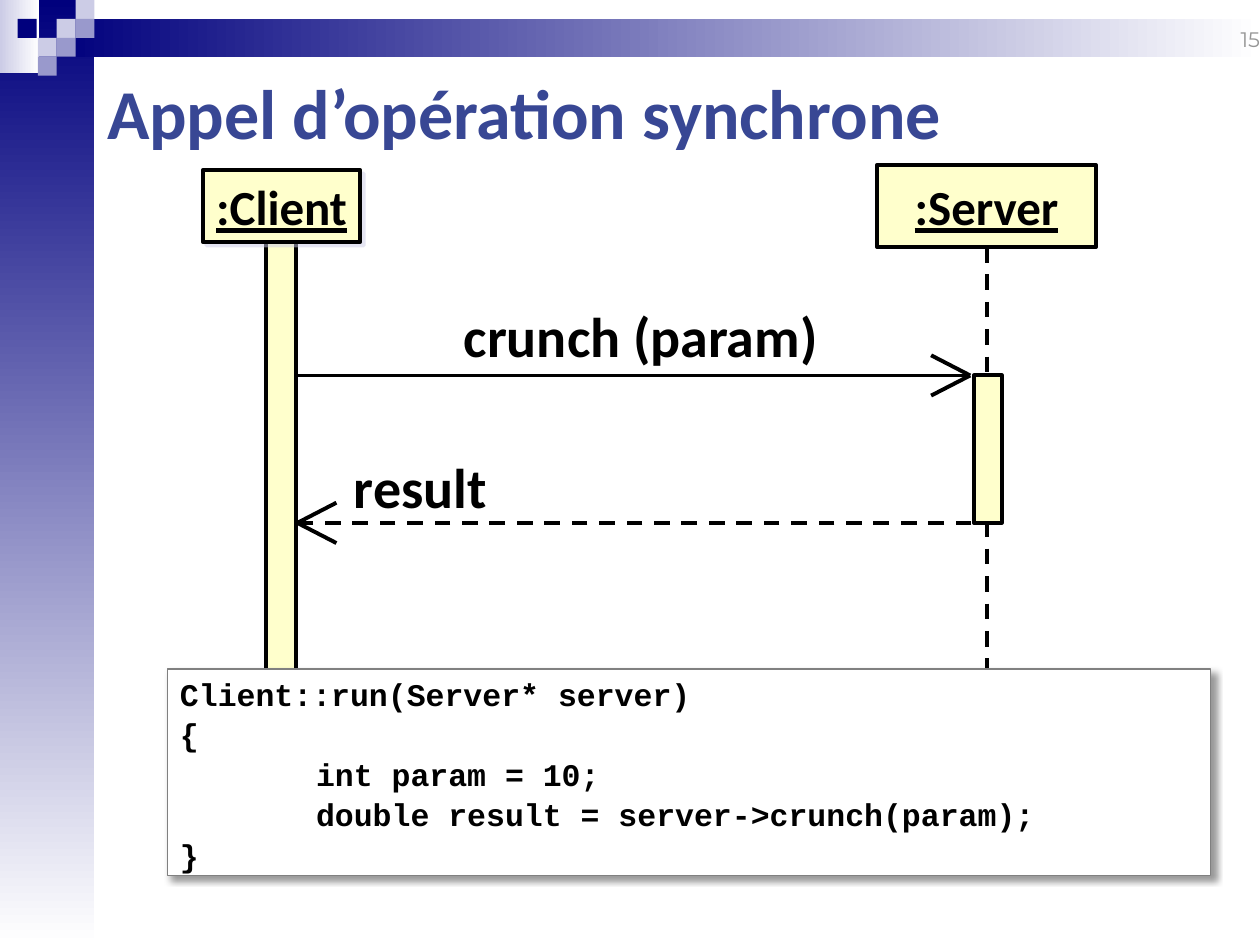
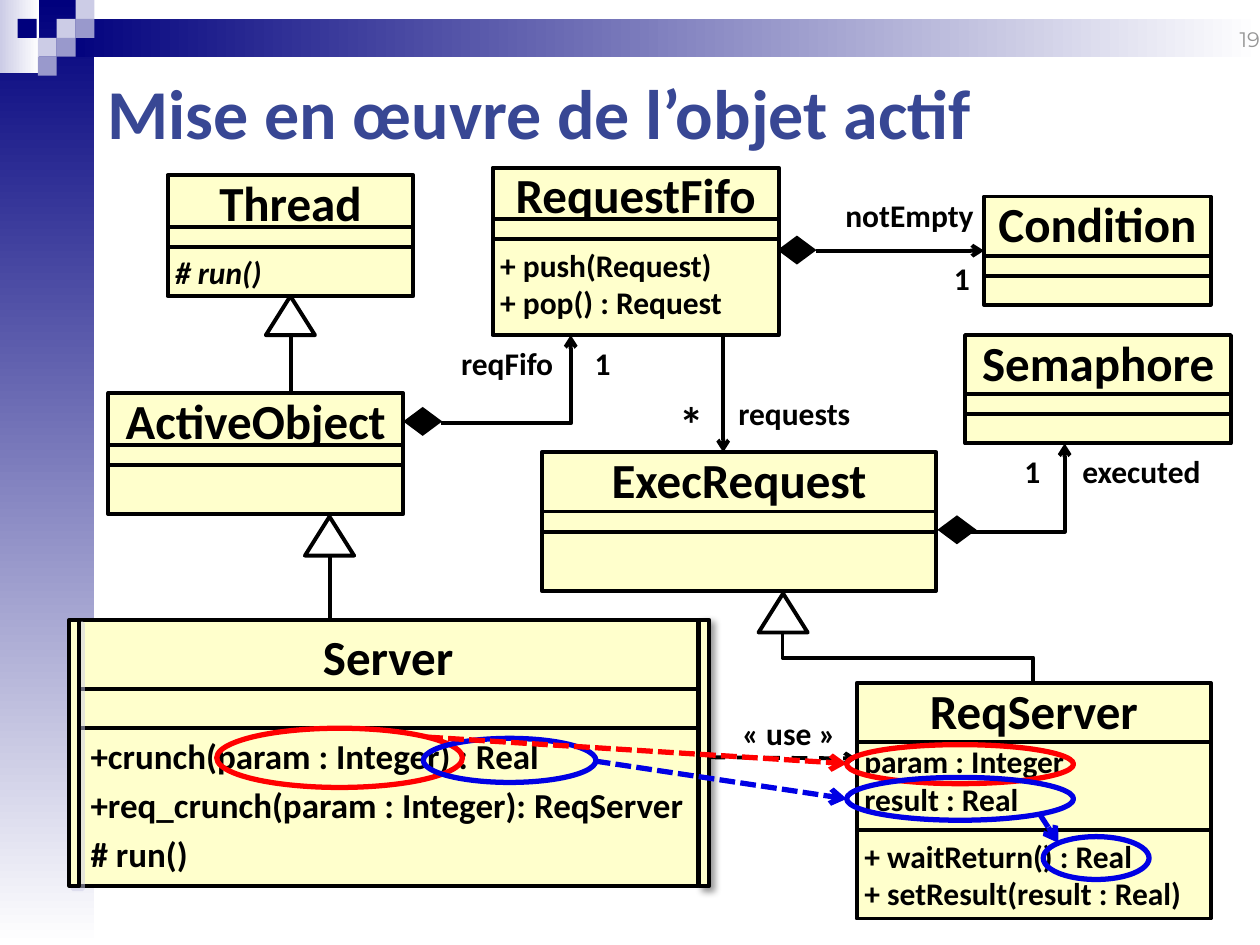
from dataclasses import dataclass
from lxml.etree import SubElement
from pptx import Presentation
from pptx.dml.color import RGBColor
from pptx.enum.dml import MSO_LINE
from pptx.enum.shapes import MSO_CONNECTOR, MSO_SHAPE
from pptx.enum.text import MSO_ANCHOR, MSO_AUTO_SIZE, PP_ALIGN
from pptx.oxml.ns import qn
from pptx.util import Inches, Pt


@dataclass(frozen=True)
class Theme:
    """Colours, fonts and sizes shared by the slides."""
    navy: str = "00007D"
    lilac: str = "CCCCE6"
    violet: str = "9999CC"
    white: str = "FFFFFF"
    black: str = "000000"
    grey: str = "808080"
    page_grey: str = "969696"
    title_blue: str = "384794"
    cream: str = "FFFFCC"
    red: str = "FF0000"
    blue: str = "0000E4"
    body_font: str = "Calibri"
    code_font: str = "Courier New"
    page_font: str = "Montserrat"
    title_size: int = 40
    message_size: int = 32
    name_size: int = 28
    method_size: int = 20
    label_size: int = 18
    page_size: int = 12
    outline: float = 2.25
    mark: float = 3


THEME = Theme()
SOFT_SHADOW = (THEME.lilac, 50, 0, 2.8)
DARK_SHADOW = (THEME.black, 40, 4, 3)


def rgb(colour):
    """Turn a hex string into a colour value."""
    return RGBColor.from_string(colour)


def apply(target, values):
    """Set each named attribute of the target."""
    for name, value in values.items():
        setattr(target, name, value)


def margins(left, top):
    """Return symmetric text margins given in inches."""
    return dict(margin_left=Inches(left), margin_right=Inches(left),
                margin_top=Inches(top), margin_bottom=Inches(top))


def write(frame, lines, size, colour=THEME.black, font=THEME.body_font, bold=True,
          italic=False, underline=False, gap=0, tab=None, paragraph_format=None, **frame_format):
    """Fill a text frame with one formatted paragraph per line."""
    apply(frame, dict(word_wrap=False, vertical_anchor=MSO_ANCHOR.TOP) | frame_format)
    for index, line in enumerate(lines):
        paragraph = frame.add_paragraph() if index else frame.paragraphs[0]
        paragraph.text = line
        apply(paragraph, dict(alignment=PP_ALIGN.LEFT) | (paragraph_format or {}))
        if index and gap:
            paragraph.space_before = Pt(gap)
        if tab:
            tabs = SubElement(paragraph._p.get_or_add_pPr(), qn("a:tabLst"))
            SubElement(tabs, qn("a:tab"), pos=str(Inches(tab)), algn="l")
        for run in paragraph.runs:
            apply(run.font, dict(name=font, size=Pt(size), bold=bold,
                                 italic=italic, underline=underline))
            run.font.color.rgb = rgb(colour)


def stroke(item, colour, width, dash=None, arrow=False):
    """Format an outline, with an optional dash and open arrowhead."""
    item.line.color.rgb = rgb(colour)
    apply(item.line, dict(width=Pt(width), dash_style=dash))
    if arrow:
        SubElement(item._element.spPr.find(qn("a:ln")), qn("a:tailEnd"), type="arrow")


def cast_shadow(shape, colour, opacity, blur, distance):
    """Add a shadow falling to the lower right."""
    effects = shape._element.spPr.find(qn("a:effectLst"))
    shadow = SubElement(effects, qn("a:outerShdw"), blurRad=str(Pt(blur)),
                        dist=str(Pt(distance)), dir="2700000", algn="tl", rotWithShape="0")
    tint = SubElement(shadow, qn("a:srgbClr"), val=colour)
    SubElement(tint, qn("a:alpha"), val=str(opacity * 1000))


def block(slide, place, fill=THEME.cream, line=THEME.black, width=THEME.outline,
          kind=MSO_SHAPE.RECTANGLE, shadow=None):
    """Add a preset shape; a fill or line of None is left out."""
    shape = slide.shapes.add_shape(kind, *map(Inches, place))
    shape.shadow.inherit = False
    if fill:
        shape.fill.solid()
        shape.fill.fore_color.rgb = rgb(fill)
    else:
        shape.fill.background()
    if line:
        stroke(shape, line, width)
    else:
        shape.line.fill.background()
    if shadow:
        cast_shadow(shape, *shadow)
    return shape


def gradient(slide, place, start, angle):
    """Add a band fading from a colour to white."""
    band = block(slide, place, line=None)
    band.fill.gradient()
    band.fill.gradient_angle = angle
    for stop, colour in zip(band.fill.gradient_stops, (start, THEME.white)):
        stop.color.rgb = rgb(colour)


def label(slide, place, text, size=THEME.label_size):
    """Add a diagram label without margins."""
    box = slide.shapes.add_textbox(*map(Inches, place))
    write(box.text_frame, [text], size, auto_size=MSO_AUTO_SIZE.SHAPE_TO_FIT_TEXT,
          **margins(0, 0))


def link(slide, start, end, colour=THEME.black, width=THEME.outline, dash=None,
         arrow=False, kind=MSO_CONNECTOR.STRAIGHT):
    """Add a connector between two points."""
    connector = slide.shapes.add_connector(kind, *map(Inches, (*start, *end)))
    stroke(connector, colour, width, dash, arrow)
    SubElement(connector._element.spPr, qn("a:effectLst"))
    return connector


def drop_link(slide, start, end):
    """Add an elbow that leaves downwards and arrives downwards."""
    middle_x, middle_y = (start[0] + end[0]) / 2, (start[1] + end[1]) / 2
    half_run, half_drop = (end[0] - start[0]) / 2, (end[1] - start[1]) / 2
    elbow = link(slide, (middle_x + half_drop, middle_y - half_run),
                 (middle_x - half_drop, middle_y + half_run), kind=MSO_CONNECTOR.ELBOW)
    elbow._element.spPr.find(qn("a:xfrm")).set("rot", "16200000")


def corner_arrow(slide, start, end):
    """Add an arrow that runs across and then up."""
    corner = (end[0], start[1])
    builder = slide.shapes.build_freeform(*map(Inches, start))
    builder.add_line_segments([tuple(map(Inches, point)) for point in (corner, end)], close=False)
    route = builder.convert_to_shape()
    route.shadow.inherit = False
    route.fill.background()
    stroke(route, THEME.black, THEME.outline, arrow=True)


def message(slide, start, end, dash=None):
    """Add a sequence message with a wide open head."""
    link(slide, start, end, dash=dash)
    back = end[0] + (0.31 if start[0] > end[0] else -0.31)
    for rise in (-0.16, 0.16):
        link(slide, (back, end[1] + rise), end)


def participant(slide, place, name, shadow=None):
    """Add the head box of a lifeline."""
    head = block(slide, place, shadow=shadow)
    write(head.text_frame, [name], THEME.name_size, underline=True,
          vertical_anchor=MSO_ANCHOR.MIDDLE, paragraph_format=dict(alignment=PP_ALIGN.CENTER))
    return head


def uml_class(slide, left, top, width, heights, name, attributes=(), operations=(),
              italic=False, size=THEME.label_size, inset=0.06, gap=0, spacing=0.85, shadow=None):
    """Add a class box with name, attribute and operation sections."""
    sections = []
    for height in heights:
        section = block(slide, (left, top, width, height), shadow=None if sections else shadow)
        sections.append(section.text_frame)
        top += height
    write(sections[0], [name], THEME.name_size, **margins(inset, 0.05),
          paragraph_format=dict(alignment=PP_ALIGN.CENTER, line_spacing=spacing))
    if attributes:
        write(sections[1], attributes, size, **margins(inset, 0))
    if operations:
        write(sections[2], operations, size, italic=italic, gap=gap, **margins(inset, 0.05))


def start_slide(deck, title, page, title_height):
    """Add a slide with its bands, corner squares, title and page number."""
    slide = deck.slides.add_slide(deck.slide_layouts[5])
    gradient(slide, (0, 0, 0.75, 7.5), THEME.navy, 270)
    gradient(slide, (0, 0, 0.31, 0.58), THEME.lilac, 0)
    gradient(slide, (0.45, 0.15, 9.55, 0.3), THEME.navy, 0)
    squares = {THEME.lilac: [(0.45, 0.15), (0.6, 0), (0.3, 0.3)],
               THEME.violet: [(0.6, 0.15), (0.45, 0.3), (0.3, 0.45)],
               THEME.navy: [(0.14, 0.15)]}
    for colour, corners in squares.items():
        for corner in corners:
            block(slide, (*corner, 0.15, 0.15), colour, None)
    heading = slide.shapes.title
    apply(heading, dict(left=Inches(0.75), top=Inches(0.5),
                        width=Inches(9.1), height=Inches(title_height)))
    write(heading.text_frame, [title], THEME.title_size, THEME.title_blue,
          word_wrap=True, auto_size=MSO_AUTO_SIZE.NONE)
    number = slide.shapes.add_textbox(*map(Inches, (9.68, 0.21, 0.32, 0.2)))
    write(number.text_frame, [page], THEME.page_size, THEME.page_grey, THEME.page_font,
          bold=False, vertical_anchor=MSO_ANCHOR.MIDDLE, **margins(0, 0),
          paragraph_format=dict(alignment=PP_ALIGN.RIGHT))
    return slide


def build_synchronous_call(deck):
    """Build the sequence diagram of a synchronous call."""
    slide = start_slide(deck, "Appel d’opération synchrone", "15", 1.12)
    server = participant(slide, (6.96, 1.31, 1.74, 0.65), ":Server")
    block(slide, (2.11, 1.92, 0.24, 4.1))
    lifeline = link(slide, (7.83, 1.96), (7.83, 6.13), dash=MSO_LINE.DASH)
    lifeline.begin_connect(server, 2)
    block(slide, (7.73, 2.98, 0.22, 1.17))
    label(slide, (3.68, 2.39, 2.83, 0.54), "crunch (param)", THEME.message_size)
    message(slide, (2.35, 2.98), (7.7, 2.98))
    label(slide, (2.81, 3.59, 1.07, 0.54), "result", THEME.message_size)
    message(slide, (7.71, 4.15), (2.36, 4.15), MSO_LINE.DASH)
    participant(slide, (1.61, 1.35, 1.25, 0.57), ":Client", SOFT_SHADOW)
    code = block(slide, (1.33, 5.31, 8.28, 1.64), THEME.white, THEME.grey, 0.75,
                 shadow=DARK_SHADOW)
    write(code.text_frame, ["Client::run(Server* server)", "{", "\tint param = 10;",
                            "\tdouble result = server->crunch(param);", "}"],
          THEME.label_size, font=THEME.code_font, gap=1.3, tab=1.08, word_wrap=True)


def build_active_object(deck):
    """Build the class diagram of the active object."""
    slide = start_slide(deck, "Mise en œuvre de l’objet actif", "19", 0.75)
    uml_class(slide, 0.62, 4.92, 4.92, (0.55, 0.31, 1.25), "Server",
              operations=["+crunch(param : Integer) : Real",
                          "+req_crunch(param : Integer): ReqServer", "# run()"],
              size=THEME.method_size, inset=0.1, gap=4, spacing=1.0, shadow=SOFT_SHADOW)
    for left, shadow in ((5.55, DARK_SHADOW), (0.55, SOFT_SHADOW)):
        block(slide, (left, 4.92, 0.08, 2.11), shadow=shadow)
    uml_class(slide, 6.8, 5.42, 2.81, (0.47, 0.7, 0.7), "ReqServer",
              ["param : Integer", "result : Real"],
              ["+ waitReturn() : Real", "+ setResult(result : Real)"])
    uml_class(slide, 1.33, 1.39, 1.95, (0.41, 0.16, 0.39), "Thread",
              operations=["# run()"], italic=True)
    uml_class(slide, 0.86, 3.12, 2.34, (0.41, 0.16, 0.39), "ActiveObject")
    uml_class(slide, 3.91, 1.33, 2.27, (0.41, 0.16, 0.76), "RequestFifo",
              operations=["+ push(Request)", "+ pop() : Request"])
    uml_class(slide, 4.3, 3.59, 3.13, (0.47, 0.16, 0.47), "ExecRequest")
    uml_class(slide, 7.81, 1.56, 1.8, (0.47, 0.16, 0.23), "Condition")
    uml_class(slide, 7.66, 2.66, 2.11, (0.47, 0.16, 0.23), "Semaphore")

    for left, top in ((2.11, 2.35), (2.42, 4.1), (6.02, 4.71)):
        block(slide, (left, top, 0.39, 0.31), THEME.white, kind=MSO_SHAPE.ISOSCELES_TRIANGLE)
    for left, top in ((3.2, 3.23), (6.17, 1.87), (7.44, 4.09)):
        block(slide, (left, top, 0.31, 0.23), THEME.black, None, kind=MSO_SHAPE.DIAMOND)
    link(slide, (2.31, 2.67), (2.31, 3.13))
    link(slide, (2.62, 4.42), (2.62, 4.92))
    drop_link(slide, (6.21, 5.02), (8.2, 5.42))
    link(slide, (5.74, 2.65), (5.74, 3.59), arrow=True)
    link(slide, (6.48, 1.99), (7.81, 1.99), arrow=True)
    link(slide, (5.63, 6.01), (6.8, 6.02), dash=MSO_LINE.DASH, arrow=True)
    corner_arrow(slide, (3.5, 3.36), (4.53, 2.66))
    corner_arrow(slide, (7.71, 4.22), (8.45, 3.52))

    for left, top, width, text in (
            (5.89, 5.67, 0.75, "« use »"), (5.86, 3.13, 0.89, "requests"),
            (3.66, 2.73, 0.74, "reqFifo"), (4.72, 2.73, 0.13, "1"),
            (6.71, 1.56, 1.03, "notEmpty"), (7.57, 2.06, 0.13, "1"),
            (8.59, 3.59, 0.94, "executed"), (8.13, 3.59, 0.13, "1")):
        label(slide, (left, top, width, 0.3), text)
    label(slide, (5.39, 3.12, 0.2, 0.47), "*", THEME.name_size)

    for place, colour in (((1.72, 5.78, 1.95, 0.47), THEME.red),
                          ((6.72, 5.91, 1.8, 0.31), THEME.red),
                          ((3.36, 5.86, 1.37, 0.35), THEME.blue),
                          ((6.72, 6.17, 1.8, 0.34), THEME.blue),
                          ((8.28, 6.64, 0.84, 0.34), THEME.blue)):
        block(slide, place, None, colour, THEME.mark, MSO_SHAPE.OVAL)
    for start, end, colour in (((4.72, 6.04), (6.72, 6.34), THEME.blue),
                               ((8.25, 6.46), (8.4, 6.69), THEME.blue),
                               ((3.39, 5.85), (6.72, 6.06), THEME.red)):
        link(slide, start, end, colour, THEME.mark, MSO_LINE.SQUARE_DOT, True)


def main():
    """Build and save the presentation."""
    deck = Presentation()
    apply(deck, dict(slide_width=Inches(10), slide_height=Inches(7.5)))
    build_synchronous_call(deck)
    build_active_object(deck)
    deck.save("out.pptx")


if __name__ == "__main__":
    main()
